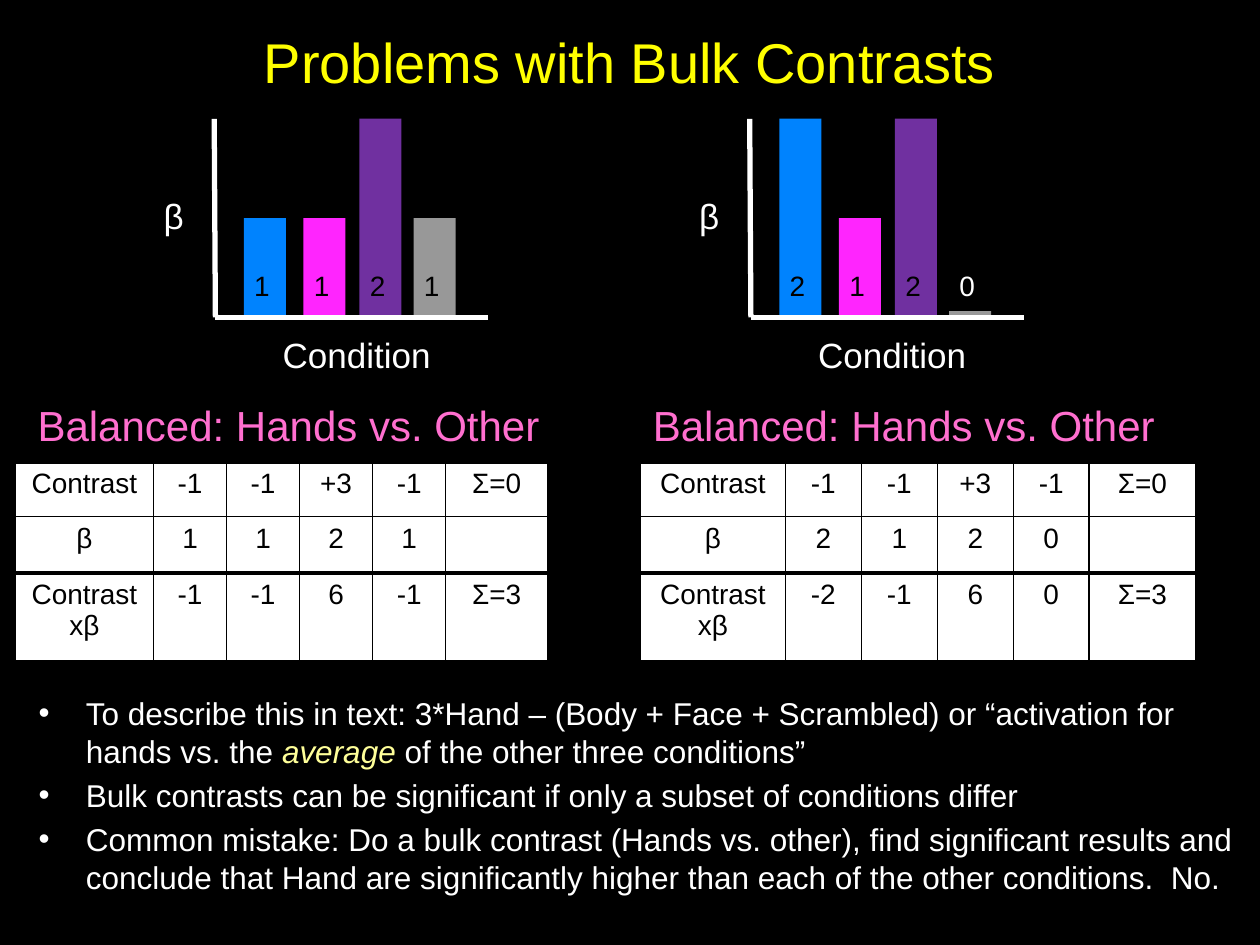
from lxml.etree import SubElement
from pptx import Presentation
from pptx.dml.color import RGBColor
from pptx.enum.shapes import MSO_CONNECTOR as Connector, MSO_SHAPE as Shape
from pptx.enum.text import MSO_ANCHOR as Anchor, PP_ALIGN as Align
from pptx.oxml.ns import qn
from pptx.util import Pt

BAR_COLORS = ["0083FE", "FF25FE", "7030A0", "989898"]
BAR_OFFSETS = [17, 51, 83, 114]
BAR_WIDTH = 24
BAR_UNIT = 56.8
BASELINE = 181.4
AXIS_TOP = 68
BULLETS = [
    [("To describe this in text: 3*Hand – (Body + Face + Scrambled) or “activation for hands vs. the ", {}),
     ("average", {"color": "FFFF99", "italic": True}),
     (" of the other three conditions”", {})],
    [("Bulk contrasts can be significant if only a subset of conditions differ", {})],
    [("Common mistake: Do a bulk contrast (Hands vs. other), find significant results and "
      "conclude that Hand are significantly higher than each of the other conditions.  No.", {})],
]


def rgb(color):
    return RGBColor.from_string(color)


def add_span(para, text, size=18, color="FFFFFF", italic=False):
    span = para.add_run()
    span.text = text
    span.font.name = "Arial"
    span.font.size = Pt(size)
    span.font.color.rgb = rgb(color)
    span.font.italic = italic


def add_label(page, text, left, top, width, height, wrap=False, **style):
    box = page.shapes.add_textbox(Pt(left), Pt(top), Pt(width), Pt(height))
    box.text_frame.word_wrap = wrap
    add_span(box.text_frame.paragraphs[0], text, **style)


def add_title(page, text):
    title = page.shapes.title
    title.left, title.top, title.width, title.height = Pt(54), Pt(12.2), Pt(612), Pt(45.4)
    title.text_frame.vertical_anchor = Anchor.MIDDLE
    para = title.text_frame.paragraphs[0]
    para.alignment = Align.CENTER
    add_span(para, text, size=32, color="FFFF00")


def add_bar(page, left, height, color):
    bar = page.shapes.add_shape(
        Shape.RECTANGLE, Pt(left), Pt(BASELINE - height), Pt(BAR_WIDTH), Pt(height))
    bar.shadow.inherit = False
    bar.fill.solid()
    bar.fill.fore_color.rgb = rgb(color)
    bar.line.fill.background()


def add_axis(page, start, end):
    axis = page.shapes.add_connector(Connector.STRAIGHT, *map(Pt, start + end))
    axis.line.color.rgb = rgb("FFFFFF")
    axis.line.width = Pt(3)
    SubElement(axis._element.spPr, qn("a:effectLst"))


def add_bar_graph(page, left, values):
    for offset, value, color in zip(BAR_OFFSETS, values, BAR_COLORS):
        add_bar(page, left + offset, value * BAR_UNIT or 3.6, color)
    corner = (left + 0.7, BASELINE)
    add_axis(page, (left, AXIS_TOP), corner)
    add_axis(page, (left + 156.6, BASELINE), corner)
    for offset, value in zip(BAR_OFFSETS, values):
        add_label(page, str(value), left + offset - 1.2, 149.8, 24, 26.6,
                  size=16, color="000000" if value else "FFFFFF")
    add_label(page, "β", left - 36, 107.6, 26, 31.7, size=20)
    add_label(page, "Condition", left + 32, 186.8, 100, 31.7, size=20)


def set_borders(cell, **widths):
    properties = cell._tc.get_or_add_tcPr()
    for position, side in enumerate(["lnL", "lnR", "lnT", "lnB"]):
        line = properties.makeelement(qn("a:" + side), {"w": str(Pt(widths.get(side, 1)))})
        fill = SubElement(line, qn("a:solidFill"))
        SubElement(fill, qn("a:srgbClr"), val="000000")
        properties.insert(position, line)


def add_cell(cell, text, **borders):
    cell.fill.solid()
    cell.fill.fore_color.rgb = rgb("FFFFFF")
    set_borders(cell, **borders)
    for index, line in enumerate(text.split("\n")):
        frame = cell.text_frame
        para = frame.add_paragraph() if index else frame.paragraphs[0]
        para.alignment = Align.CENTER
        if line:
            add_span(para, line, size=16, color="000000")


def add_contrast_table(page, left, widths, betas, products):
    rows = [
        ["Contrast", "-1", "-1", "+3", "-1", "Σ=0"],
        ["β", *betas, ""],
        ["Contrast\nxβ", *products, "Σ=3"],
    ]
    borders = [{"lnT": 2.25}, {"lnB": 2.25}, {"lnT": 2.25}]
    heights = [31, 32.2, 50]
    table = page.shapes.add_table(
        3, 6, Pt(left), Pt(264.2), Pt(sum(widths)), Pt(sum(heights))).table
    for column, width in zip(table.columns, widths):
        column.width = Pt(width)
    for row, height, texts, border in zip(table.rows, heights, rows, borders):
        row.height = Pt(height)
        for cell, text in zip(row.cells, texts):
            add_cell(cell, text, **border)


def add_bullets(page, items):
    box = page.shapes.add_textbox(Pt(15), Pt(393), Pt(703), Pt(85))
    frame = box.text_frame
    frame.word_wrap = True
    for index, spans in enumerate(items):
        para = frame.add_paragraph() if index else frame.paragraphs[0]
        properties = para._p.get_or_add_pPr()
        properties.set("marL", str(Pt(27)))
        properties.set("indent", str(Pt(-27)))
        SubElement(properties, qn("a:buFont"), typeface="Arial")
        SubElement(properties, qn("a:buChar"), char="•")
        if index:
            para.space_before = Pt(3.6)
        for text, style in spans:
            add_span(para, text, **style)


def main():
    deck = Presentation()
    deck.slide_width, deck.slide_height = Pt(720), Pt(540)
    page = deck.slides.add_slide(deck.slide_layouts[5])
    page.background.fill.solid()
    page.background.fill.fore_color.rgb = rgb("000000")
    add_title(page, "Problems with Bulk Contrasts")
    add_bullets(page, BULLETS)
    add_contrast_table(page, 8.8, [79] + [41.75] * 4 + [58.3],
                       ["1", "1", "2", "1"], ["-1", "-1", "6", "-1"])
    add_contrast_table(page, 366, [82.8] + [43.4] * 4 + [60.8],
                       ["2", "1", "2", "0"], ["-2", "-1", "6", "0"])
    for left in (14.4, 366):
        add_label(page, "Balanced: Hands vs. Other", left, 224.6, 304.6, 36,
                  size=24, color="FF6FCF")
    add_bar_graph(page, 122.4, [1, 1, 2, 1])
    add_bar_graph(page, 428.4, [2, 1, 2, 0])
    deck.save("out.pptx")


if __name__ == "__main__":
    main()
